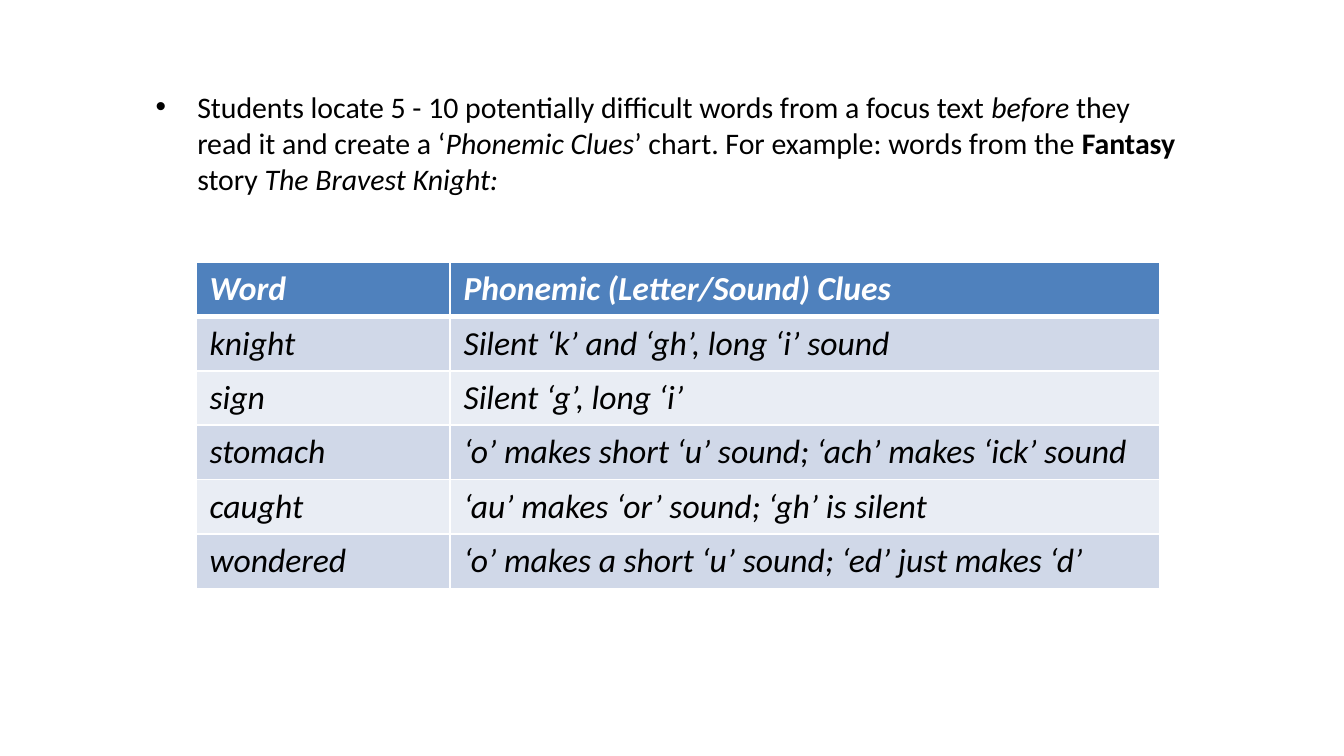
"""Build a slide with an instruction bullet and a phonemic clues chart."""
import pptx
import pptx.dml.color
import pptx.oxml.ns
import pptx.util
from lxml import etree

WIDTH = 10
HEIGHT = WIDTH * 9 / 16
FONT = "Calibri"
WHITE, BLACK, HEADER = "FFFFFF", "000000", "4F81BD"
BANDS = ("D0D8E8", "E9EDF4")
TABLE_HEIGHT = 2.43
COLUMN_WIDTHS = (1.89, 5.28)

INSTRUCTION = [
    ("Students locate 5 - 10 potentially difficult words from a focus text ", ""),
    ("before", "i"),
    (" they read it and create a ‘", ""),
    ("Phonemic Clues", "i"),
    ("’ chart. For example: words from the ", ""),
    ("Fantasy", "b"),
    (" story ", ""),
    ("The Bravest Knight:", "i"),
]
CLUES = [
    ("Word", "Phonemic (Letter/Sound) Clues"),
    ("knight", "Silent ‘k’ and ‘gh’, long ‘i’ sound"),
    ("sign", "Silent ‘g’, long ‘i’"),
    ("stomach", "‘o’ makes short ‘u’ sound; ‘ach’ makes ‘ick’ sound"),
    ("caught", "‘au’ makes ‘or’ sound; ‘gh’ is silent"),
    ("wondered", "‘o’ makes a short ‘u’ sound; ‘ed’ just makes ‘d’"),
]


def rgb(color):
    """Turn a hex string into a colour."""
    return pptx.dml.color.RGBColor.from_string(color)


def inches(*lengths):
    """Turn lengths in inches into EMU."""
    return [pptx.util.Inches(length) for length in lengths]


def add_element(parent, tag, **attributes):
    """Append a drawing element with attributes to its parent."""
    element = etree.SubElement(parent, pptx.oxml.ns.qn(tag))
    for name, value in attributes.items():
        element.set(name, str(value))
    return element


def style_font(font, size, color):
    """Set the typeface, size and colour of a font."""
    font.name = FONT
    font.size = pptx.util.Pt(size)
    font.color.rgb = rgb(color)


def add_bullet(p, indent):
    """Give a paragraph a round bullet with a hanging indent."""
    pPr = p._p.get_or_add_pPr()
    margin = pptx.util.Inches(indent)
    pPr.set("marL", str(margin))
    pPr.set("indent", str(-margin))
    add_element(pPr, "a:buFont", typeface="Arial")
    add_element(pPr, "a:buChar", char="•")


def add_instruction(s, box, pieces):
    """Add one bulleted paragraph made of plain, italic and bold pieces."""
    tf = s.shapes.add_textbox(*inches(*box)).text_frame
    tf.word_wrap = True
    p = tf.paragraphs[0]
    add_bullet(p, 0.31)
    style_font(p.font, 16, BLACK)
    for text, style in pieces:
        r = p.add_run()
        r.text = text
        if style == "i":
            r.font.italic = True
        elif style == "b":
            r.font.bold = True


def add_borders(cell, bottom):
    """Draw white borders with a chosen bottom width in points."""
    tcPr = cell._tc.get_or_add_tcPr()
    for side, width in (("L", 1), ("R", 1), ("T", 1), ("B", bottom)):
        line = add_element(tcPr, f"a:ln{side}", w=pptx.util.Pt(width))
        fill = add_element(line, "a:solidFill")
        add_element(fill, "a:srgbClr", val=WHITE)


def fill_cell(cell, text, row):
    """Write a cell and style it as header or banded body."""
    header = row == 0
    add_borders(cell, 3 if header else 1)
    cell.fill.solid()
    cell.fill.fore_color.rgb = rgb(HEADER if header else BANDS[(row - 1) % 2])
    cell.text = text
    font = cell.text_frame.paragraphs[0].font
    style_font(font, 18, WHITE if header else BLACK)
    font.bold = header
    font.italic = True


def add_clue_table(s, left, top, rows):
    """Add the table of words and clues."""
    box = inches(left, top, sum(COLUMN_WIDTHS), TABLE_HEIGHT)
    table = s.shapes.add_table(len(rows), len(COLUMN_WIDTHS), *box).table
    for column, width in zip(table.columns, COLUMN_WIDTHS):
        column.width = pptx.util.Inches(width)
    for i, texts in enumerate(rows):
        for j, text in enumerate(texts):
            fill_cell(table.cell(i, j), text, i)


def main():
    """Build and save the slide."""
    prs = pptx.Presentation()
    prs.slide_width, prs.slide_height = inches(WIDTH, HEIGHT)
    s = prs.slides.add_slide(prs.slide_layouts[6])
    add_instruction(s, (1.06, 0.61, 7.87, 0.91), INSTRUCTION)
    add_clue_table(s, 1.46, 1.95, CLUES)
    prs.save("out.pptx")


if __name__ == "__main__":
    main()
